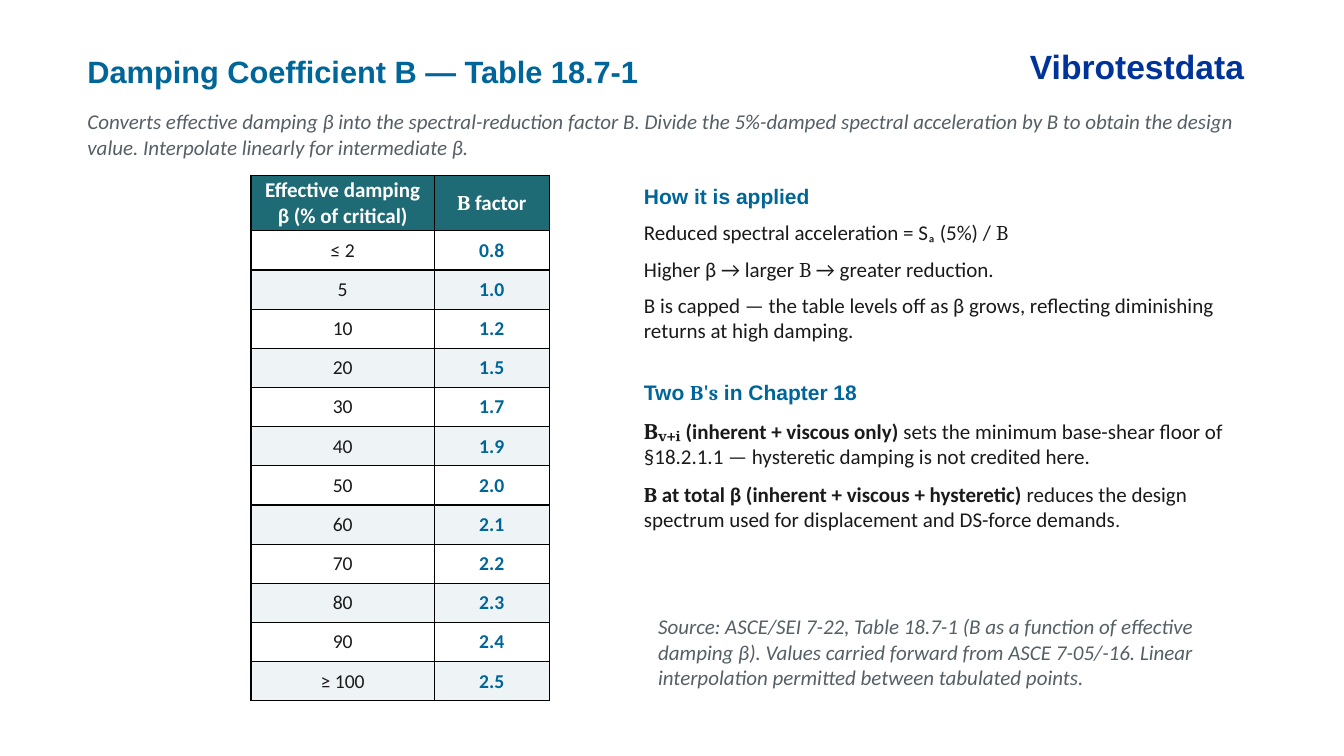
from dataclasses import dataclass
from typing import Optional

from lxml.etree import SubElement
from pptx import Presentation
from pptx.dml.color import RGBColor
from pptx.enum.text import MSO_ANCHOR, PP_ALIGN
from pptx.oxml.ns import qn
from pptx.slide import Slide
from pptx.util import Pt

COLORS = {
    "heading": "006699", "brand": "003399", "muted": "555F66", "body": "1A1A1A",
    "header": "1F6B75", "white": "FFFFFF", "band": "EEF3F5", "border": "000000",
}


@dataclass(frozen=True)
class Style:
    font: str = "Calibri"
    size: float = 15
    color: str = "body"
    bold: bool = False
    italic: bool = False


@dataclass(frozen=True)
class Span:
    text: str
    style: Style


@dataclass(frozen=True)
class Para:
    spans: tuple[Span, ...]
    space_before: float = 0
    align: Optional[PP_ALIGN] = None


@dataclass(frozen=True)
class Box:
    left: float
    top: float
    width: float
    height: float
    paras: tuple[Para, ...]
    wrap: bool = True


BODY = Style()
BODY_BOLD = Style(bold=True)
MATH = Style("Cambria")
MATH_BOLD = Style("Cambria", bold=True)
HEADING = Style("Arial", color="heading", bold=True)
MATH_HEADING = Style("Cambria", color="heading", bold=True)
NOTE = Style(color="muted", italic=True)
TABLE_HEAD = Style(color="white", bold=True)
TABLE_HEAD_MATH = Style("Cambria", color="white", bold=True)
DAMPING = Style(size=14)
FACTOR = Style(size=14, color="heading", bold=True)


def line(text: str, style: Style, space_before: float = 0) -> Para:
    return Para((Span(text, style),), space_before)


EXPLANATION = (
    line("How it is applied", HEADING),
    Para((Span("Reduced spectral acceleration = Sₐ (5%) / ", BODY), Span("B", MATH)), 8),
    Para((Span("Higher β → larger ", BODY), Span("B", MATH),
          Span(" → greater reduction.", BODY)), 8),
    line("B is capped — the table levels off as β grows, reflecting diminishing "
         "returns at high damping.", BODY, 8),
    Para((Span("Two ", HEADING), Span("B's", MATH_HEADING),
          Span(" in Chapter 18", HEADING)), 26),
    Para((Span("Bᵥ₊ᵢ ", Style("Cambria", 16, bold=True)),
          Span("(inherent + viscous only) ", BODY_BOLD),
          Span("sets the minimum base-shear floor of §18.2.1.1 — hysteretic damping "
               "is not credited here.", BODY)), 9),
    Para((Span("B", MATH_BOLD),
          Span(" at total β (inherent + viscous + hysteretic) ", BODY_BOLD),
          Span("reduces the design spectrum used for displacement and DS-force demands", BODY),
          Span(".", Style(size=13.5))), 9),
)

BOXES = (
    Box(55.4, 33.8, 646, 34, (
        line("Damping Coefficient B — Table 18.7-1", Style("Arial", 22, "heading", True)),)),
    Box(55.4, 74.2, 842.4, 44, (
        line("Converts effective damping β into the spectral-reduction factor B. Divide the "
             "5%-damped spectral acceleration by B to obtain the design value. Interpolate "
             "linearly for intermediate β.", NOTE),)),
    Box(452.9, 127.4, 452.2, 282, EXPLANATION),
    Box(463, 434.9, 417.6, 62, (
        line("Source: ASCE/SEI 7-22, Table 18.7-1 (B as a function of effective damping β). "
             "Values carried forward from ASCE 7-05/-16. Linear interpolation permitted "
             "between tabulated points.", NOTE),)),
    Box(728.6, 29.5, 169.2, 36, (
        line("Vibrotestdata", Style("Arial", 24, "brand", True)),), wrap=False),
)

TABLE_LEFT, TABLE_TOP = 179.3, 125.3
COLUMN_WIDTHS = (131, 82)
HEADER_HEIGHT, ROW_HEIGHT = 34, 28
HEADER = (
    (Span("Effective damping β (% of critical)", TABLE_HEAD),),
    (Span("B", TABLE_HEAD_MATH), Span(" factor", TABLE_HEAD)),
)
B_FACTORS = (
    ("≤ 2", "0.8"), ("5", "1.0"), ("10", "1.2"), ("20", "1.5"),
    ("30", "1.7"), ("40", "1.9"), ("50", "2.0"), ("60", "2.1"),
    ("70", "2.2"), ("80", "2.3"), ("90", "2.4"), ("≥ 100", "2.5"),
)


def rgb(name: str) -> RGBColor:
    return RGBColor.from_string(COLORS[name])


def apply_style(font, style: Style) -> None:
    font.name = style.font
    font.size = Pt(style.size)
    font.bold = style.bold
    font.italic = style.italic
    font.color.rgb = rgb(style.color)


def write_paras(frame, paras: tuple[Para, ...]) -> None:
    for index, para in enumerate(paras):
        paragraph = frame.add_paragraph() if index else frame.paragraphs[0]
        if para.align is not None:
            paragraph.alignment = para.align
        if para.space_before:
            paragraph.space_before = Pt(para.space_before)
        uniform = len({span.style for span in para.spans}) == 1
        if uniform:
            apply_style(paragraph.font, para.spans[0].style)
        for span in para.spans:
            run = paragraph.add_run()
            run.text = span.text
            if not uniform:
                apply_style(run.font, span.style)


def add_box(page: Slide, box: Box) -> None:
    shape = page.shapes.add_textbox(Pt(box.left), Pt(box.top), Pt(box.width), Pt(box.height))
    shape.text_frame.word_wrap = box.wrap
    write_paras(shape.text_frame, box.paras)


def add_borders(cell) -> None:
    """Put a 1 pt line on each side; call before the fill, which must follow the lines."""
    properties = cell._tc.get_or_add_tcPr()
    for side in ("a:lnL", "a:lnR", "a:lnT", "a:lnB"):
        border = SubElement(properties, qn(side), w=str(Pt(1)))
        fill = SubElement(border, qn("a:solidFill"))
        SubElement(fill, qn("a:srgbClr"), val=COLORS["border"])


def fill_cell(cell, spans: tuple[Span, ...], fill: str) -> None:
    cell.margin_left = cell.margin_right = Pt(8.64)
    cell.margin_top = cell.margin_bottom = Pt(1.44)
    cell.vertical_anchor = MSO_ANCHOR.MIDDLE
    add_borders(cell)
    cell.fill.solid()
    cell.fill.fore_color.rgb = rgb(fill)
    write_paras(cell.text_frame, (Para(spans, align=PP_ALIGN.CENTER),))


def add_factor_table(page: Slide) -> None:
    rows = [HEADER] + [((Span(damping, DAMPING),), (Span(factor, FACTOR),))
                       for damping, factor in B_FACTORS]
    height = HEADER_HEIGHT + ROW_HEIGHT * len(B_FACTORS)
    table = page.shapes.add_table(
        len(rows), len(COLUMN_WIDTHS), Pt(TABLE_LEFT), Pt(TABLE_TOP),
        Pt(sum(COLUMN_WIDTHS)), Pt(height)).table
    for column, width in zip(table.columns, COLUMN_WIDTHS):
        column.width = Pt(width)
    for index, row in enumerate(rows):
        table.rows[index].height = Pt(ROW_HEIGHT if index else HEADER_HEIGHT)
        fill = "header" if index == 0 else "white" if index % 2 else "band"
        for position, spans in enumerate(row):
            fill_cell(table.cell(index, position), spans, fill)


def main() -> None:
    deck = Presentation()
    deck.slide_width, deck.slide_height = Pt(960), Pt(540)
    page = deck.slides.add_slide(deck.slide_layouts[6])
    add_factor_table(page)
    for box in BOXES:
        add_box(page, box)
    deck.save("out.pptx")


if __name__ == "__main__":
    main()
